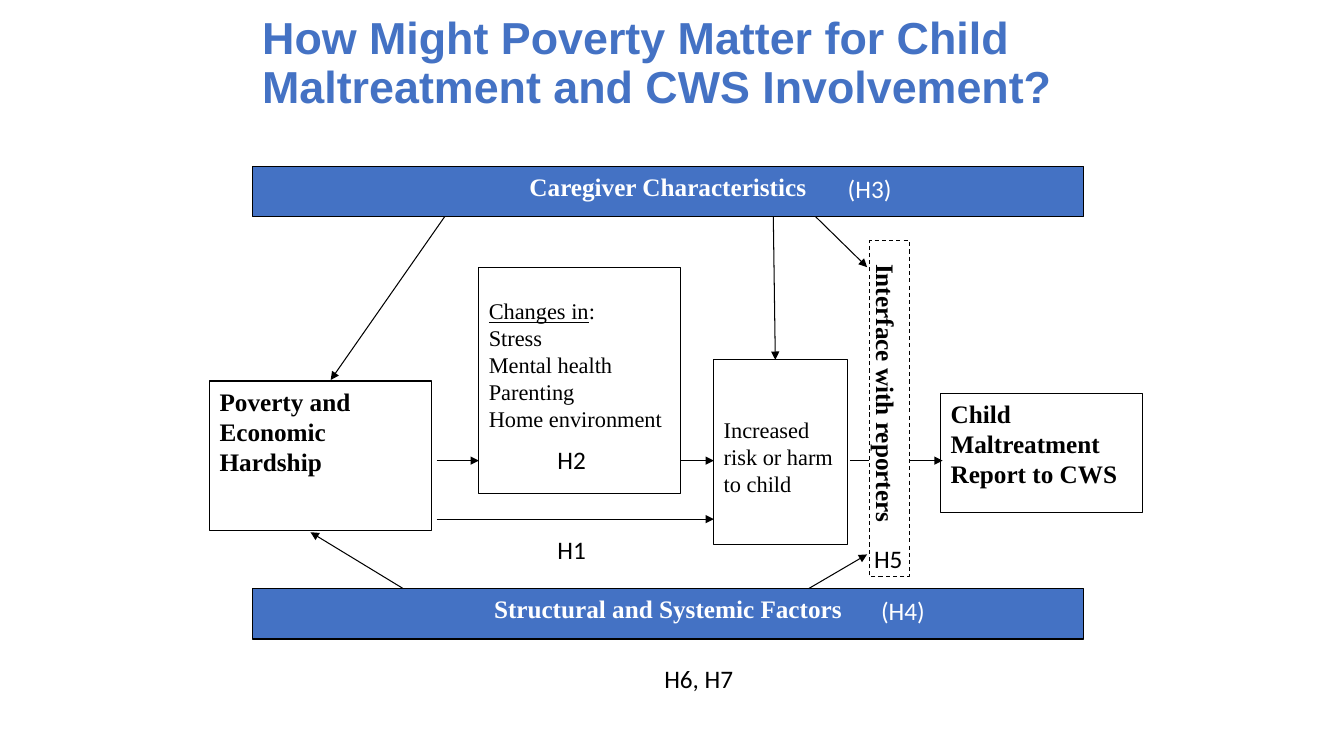
from lxml import etree
from pptx import Presentation
from pptx.dml.color import RGBColor
from pptx.enum.dml import MSO_LINE
from pptx.enum.shapes import MSO_CONNECTOR, MSO_SHAPE
from pptx.enum.text import MSO_ANCHOR, MSO_AUTO_SIZE, PP_ALIGN
from pptx.oxml.ns import qn
from pptx.util import Inches, Pt

BLUE = RGBColor(0x44, 0x72, 0xC4)
BLACK = RGBColor(0, 0, 0)
WHITE = RGBColor(255, 255, 255)
RECTANGLE = MSO_SHAPE.RECTANGLE
STRAIGHT = MSO_CONNECTOR.STRAIGHT
DASH = MSO_LINE.DASH
TOP, BOTTOM = MSO_ANCHOR.TOP, MSO_ANCHOR.BOTTOM
LEFT, CENTER = PP_ALIGN.LEFT, PP_ALIGN.CENTER
NO_AUTOFIT = MSO_AUTO_SIZE.NONE
SERIF, SANS, HEADING = "Times New Roman", "Calibri", "Arial"

TITLE_BOX = (2.5, 0.5, 9.75, 0.67)
CAREGIVER_BOX = (2.5, 1.65, 8.25, 0.5)
STRUCTURAL_BOX = (2.5, 5.84, 8.25, 0.5)
PATHWAY_BOX = (2.08, 2.65, 9.25, 2.75)
INTERFACE_BOX = (8.62, 2.39, 0.4, 3.33)


def add_run(paragraph, text, size, font=SERIF, color=BLACK, bold=False, underline=False):
    """Add one formatted run to a paragraph."""
    run = paragraph.add_run()
    run.text = text
    run.font.size = Pt(size)
    run.font.name = font
    run.font.color.rgb = color
    run.font.bold = bold
    run.font.underline = underline


def add_box(slide, box, fill=None, inset_top=0.05):
    """Draw a thin-outlined rectangle and return it, ready for text."""
    rectangle = slide.shapes.add_shape(RECTANGLE, *map(Inches, box))
    rectangle.shadow.inherit = False
    if fill is None:
        rectangle.fill.background()
    else:
        rectangle.fill.solid()
        rectangle.fill.fore_color.rgb = fill
    rectangle.line.color.rgb = BLACK
    rectangle.line.width = Pt(0.75)
    frame = rectangle.text_frame
    frame.word_wrap = True
    frame.vertical_anchor = TOP
    frame.margin_top = Inches(inset_top)
    frame.paragraphs[0].alignment = LEFT
    return rectangle


def add_arrow(slide, start, end):
    """Draw a thin black arrow between two points."""
    arrow = slide.shapes.add_connector(STRAIGHT, *map(Inches, start + end))
    arrow.line.color.rgb = BLACK
    arrow.line.width = Pt(0.75)
    etree.SubElement(arrow.line._get_or_add_ln(), qn("a:tailEnd"), type="triangle")
    etree.SubElement(arrow._element.spPr, qn("a:effectLst"))


def add_hypothesis(slide, left, top, text, width=0.51, color=BLACK):
    """Place a hypothesis label."""
    label = slide.shapes.add_textbox(*map(Inches, (left, top, width, 0.4)))
    label.text_frame.word_wrap = True
    add_run(label.text_frame.paragraphs[0], text, 18, SANS, color)


def add_title(slide, box):
    """Set the slide title in its placeholder."""
    title = slide.shapes.title
    title.left, title.top, title.width, title.height = map(Inches, box)
    frame = title.text_frame
    frame.word_wrap = True
    frame.auto_size = NO_AUTOFIT
    frame.vertical_anchor = BOTTOM
    paragraph = frame.paragraphs[0]
    paragraph.alignment = LEFT
    paragraph.line_spacing = 0.9
    question = "How Might Poverty Matter for Child Maltreatment and CWS Involvement?"
    add_run(paragraph, question, 32, HEADING, BLUE, bold=True)


def add_factor_band(slide, box, factor, hypothesis, hypothesis_offset, arrows):
    """Draw a factor band with its hypothesis and the arrows leaving its edge."""
    left, top, _, height = box
    band = add_box(slide, box, BLUE)
    paragraph = band.text_frame.paragraphs[0]
    paragraph.alignment = CENTER
    add_run(paragraph, factor, 18, color=WHITE, bold=True)
    add_hypothesis(slide, left + hypothesis_offset, top + 0.02, hypothesis, 0.96, WHITE)
    for start_offset, edge, end_offset, rise in arrows:
        start_y = top + edge * height
        add_arrow(slide, (left + start_offset, start_y),
                  (left + end_offset, start_y + rise))


def add_pathway(slide, box):
    """Draw the path from poverty through changes and risk to a report."""
    left, top, _, height = box
    changes_left, risk_left, report_left = left + 2.67, left + 5, left + 7.25
    main_y, direct_y = top + 1.92, top + 2.5

    outcomes = (
        ((left, top + 1.13, 2.2, 1.48), "Poverty and Economic Hardship", 18, True, 0.05),
        ((risk_left, top + 0.92, 1.33, height - 0.92),
         "Increased risk or harm to child", 16, False, 0.56),
        ((report_left, top + 1.25, 2, 1.18), "Child Maltreatment Report to CWS", 18, True, 0.05),
    )
    for place, text, size, bold, inset in outcomes:
        stage = add_box(slide, place, inset_top=inset)
        add_run(stage.text_frame.paragraphs[0], text, size, bold=bold)

    changes = add_box(slide, (changes_left, top, 2, 2.25), inset_top=0.3).text_frame
    add_run(changes.paragraphs[0], "Changes in", 16, underline=True)
    add_run(changes.paragraphs[0], ":", 16)
    for change in ("Stress", "Mental health", "Parenting", "Home environment"):
        paragraph = changes.add_paragraph()
        paragraph.alignment = LEFT
        add_run(paragraph, change, 16)

    for start_x, end_x, y in (
        (left + 2.25, changes_left, main_y),
        (changes_left + 2, risk_left, main_y),
        (risk_left + 1.35, report_left + 0.02, main_y),
        (left + 2.25, risk_left, direct_y),
    ):
        add_arrow(slide, (start_x, y), (end_x, y))
    add_hypothesis(slide, left + 3.35, main_y - 0.21, "H2")
    add_hypothesis(slide, left + 3.35, direct_y + 0.1, "H1")


def add_interface(slide, box):
    """Draw the dashed upright box that the path crosses, with its label."""
    left, top, width, height = box
    flat_left = left + (width - height) / 2
    flat_top = top + (height - width) / 2
    interface = add_box(slide, (flat_left, flat_top, height, width), WHITE, 0.08)
    interface.rotation = 90
    interface.line.dash_style = DASH
    interface.text_frame.margin_left = Inches(0.23)
    add_run(interface.text_frame.paragraphs[0], "Interface with reporters", 18, bold=True)
    add_hypothesis(slide, left - 0.05, top + 2.95, "H5")


def main():
    """Build and save the slide."""
    presentation = Presentation()
    presentation.slide_width = Inches(13.33)
    presentation.slide_height = Inches(7.5)
    slide = presentation.slides.add_slide(presentation.slide_layouts[5])
    add_title(slide, TITLE_BOX)
    add_pathway(slide, PATHWAY_BOX)
    add_interface(slide, INTERFACE_BOX)
    add_factor_band(slide, CAREGIVER_BOX, "Caregiver Characteristics", "(H3)", 5.81,
                    ((1.91, 1, 0.78, 1.62), (5.17, 1, 5.19, 1.42), (5.59, 1, 6.1, 0.5)))
    add_factor_band(slide, STRUCTURAL_BOX, "Structural and Systemic Factors", "(H4)", 6.14,
                    ((1.5, 0, 0.58, -0.56), (5.52, 0, 6.1, -0.34)))
    add_hypothesis(slide, 6.49, 6.53, "H6, H7", 1.05)
    presentation.save("out.pptx")


if __name__ == "__main__":
    main()
